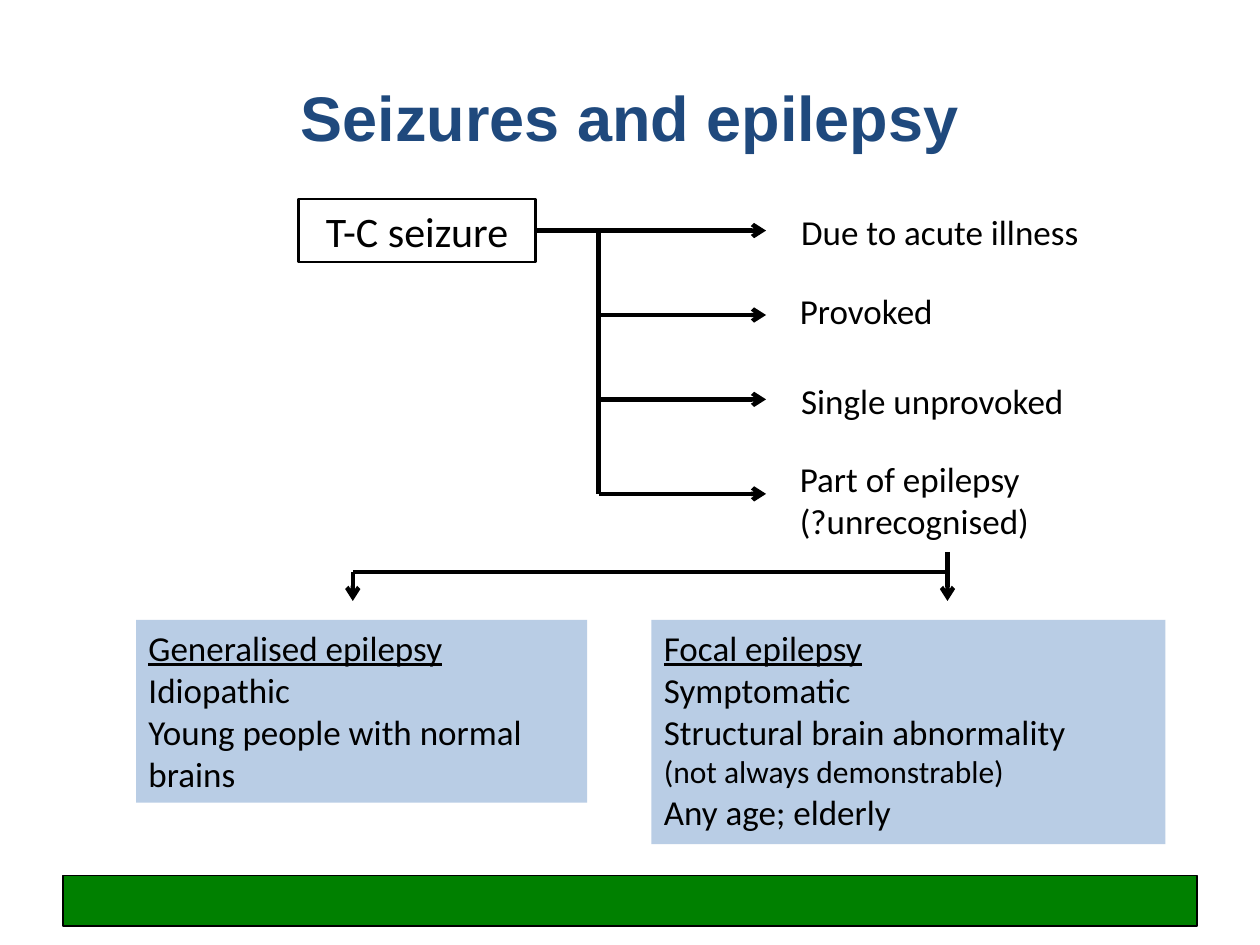
"""Build the slide on seizures and epilepsy."""
from dataclasses import dataclass

from lxml import etree
from pptx import Presentation
from pptx.dml.color import RGBColor
from pptx.enum.shapes import MSO_CONNECTOR, MSO_SHAPE
from pptx.enum.text import MSO_ANCHOR, PP_ALIGN
from pptx.oxml.ns import qn
from pptx.util import Inches, Pt

RECT = MSO_SHAPE.RECTANGLE
STRAIGHT = MSO_CONNECTOR.STRAIGHT
LEFT, CENTER = PP_ALIGN.LEFT, PP_ALIGN.CENTER
TOP, MIDDLE = MSO_ANCHOR.TOP, MSO_ANCHOR.MIDDLE
BLACK = RGBColor(0x00, 0x00, 0x00)
NAVY = RGBColor(0x1F, 0x49, 0x7D)
GREEN = RGBColor(0x00, 0x80, 0x00)
BLUE = RGBColor(0xB9, 0xCD, 0xE5)
RIGHT_SIDE = 3


@dataclass(frozen=True)
class Area:
    left: float
    top: float
    width: float
    height: float

    def lengths(self):
        return [Inches(n) for n in (self.left, self.top, self.width, self.height)]


@dataclass(frozen=True)
class Row:
    text: str
    size: int = 20
    under: bool = False


@dataclass(frozen=True)
class Cause:
    area: Area
    rows: tuple[Row, ...]
    level: float


@dataclass(frozen=True)
class Panel:
    area: Area
    rows: tuple[Row, ...]


@dataclass(frozen=True)
class Line:
    start: tuple[float, float]
    end: tuple[float, float]
    arrow: bool = False


SEIZURE = Area(2.37, 1.58, 1.88, 0.5)
TRUNK, TIP = 4.75, 6.08
CAUSES = (
    Cause(Area(6.26, 1.62, 2.83, 0.43), (Row("Due to acute illness"),), 1.83),
    Cause(Area(6.25, 2.25, 1.67, 0.43), (Row("Provoked"),), 2.5),
    Cause(Area(6.26, 2.96, 3.16, 0.43), (Row("Single unprovoked"),), 3.17),
    Cause(Area(6.25, 3.58, 2.77, 0.77),
          (Row("Part of epilepsy"), Row("(?unrecognised)")), 3.92),
)
PANELS = (
    Panel(Area(1.08, 4.92, 3.58, 1.45), (
        Row("Generalised epilepsy", under=True),
        Row("Idiopathic"),
        Row("Young people with normal brains"))),
    Panel(Area(5.17, 4.92, 4.08, 1.78), (
        Row("Focal epilepsy", under=True),
        Row("Symptomatic"),
        Row("Structural brain abnormality"),
        Row("(not always demonstrable)", size=18),
        Row("Any age; elderly"))),
)
FOCAL, GENERAL, FORK, FOOT = 7.52, 2.8, 4.54, 4.77
FIRST, LAST = CAUSES[0].level, CAUSES[-1].level
LINES = (
    Line((TRUNK, FIRST), (TRUNK, LAST)),
    *(Line((TRUNK, cause.level), (TIP, cause.level), True) for cause in CAUSES[1:]),
    Line((FOCAL, 4.38), (FOCAL, FOOT), True),
    Line((FOCAL, FORK), (GENERAL, FORK)),
    Line((GENERAL, FORK), (GENERAL, FOOT), True),
)


def write(frame, rows, *, font="Calibri", color=BLACK, bold=False,
          align=LEFT, anchor=TOP):
    frame.word_wrap = True
    frame.vertical_anchor = anchor
    for i, row in enumerate(rows):
        para = frame.add_paragraph() if i else frame.paragraphs[0]
        para.alignment = align
        run = para.add_run()
        run.text = row.text
        run.font.name = font
        run.font.size = Pt(row.size)
        run.font.bold = bold
        run.font.underline = row.under
        run.font.color.rgb = color


def draw_box(slide, area: Area, fill: RGBColor | None = None, edge: float = 0):
    box = slide.shapes.add_shape(RECT, *area.lengths())
    box.shadow.inherit = False
    if fill is None:
        box.fill.background()
    else:
        box.fill.solid()
        box.fill.fore_color.rgb = fill
    if edge:
        box.line.color.rgb = BLACK
        box.line.width = Pt(edge)
    else:
        box.line.fill.background()
    return box


def draw_line(slide, line: Line):
    ends = [Inches(n) for n in (*line.start, *line.end)]
    link = slide.shapes.add_connector(STRAIGHT, *ends)
    link.line.color.rgb = BLACK
    link.line.width = Pt(2.5)
    if line.arrow:
        etree.SubElement(link.line._get_or_add_ln(), qn("a:tailEnd"), type="arrow")
    etree.SubElement(link._element.spPr, qn("a:effectLst"))
    return link


def main():
    deck = Presentation()
    deck.slide_width, deck.slide_height = Inches(10), Inches(7.5)
    slide = deck.slides.add_slide(deck.slide_layouts[5])
    draw_box(slide, Area(0.5, 6.95, 9, 0.4), GREEN, 0.75)

    title = slide.shapes.title
    title.left, title.top, title.width, title.height = Area(0.5, 0.3, 9, 1.25).lengths()
    write(title.text_frame, [Row("Seizures and epilepsy", 36)], font="Arial",
          color=NAVY, bold=True, align=CENTER, anchor=MIDDLE)

    source = draw_box(slide, SEIZURE, edge=1.5)
    write(source.text_frame, [Row("T-C seizure", 24)], align=CENTER)
    stem = draw_line(slide, Line((SEIZURE.left + SEIZURE.width, FIRST), (TIP, FIRST), True))
    stem.begin_connect(source, RIGHT_SIDE)

    for cause in CAUSES:
        label = slide.shapes.add_textbox(*cause.area.lengths())
        write(label.text_frame, cause.rows)
    for panel in PANELS:
        write(draw_box(slide, panel.area, BLUE).text_frame, panel.rows)
    for line in LINES:
        draw_line(slide, line)

    deck.save("out.pptx")


if __name__ == "__main__":
    main()
